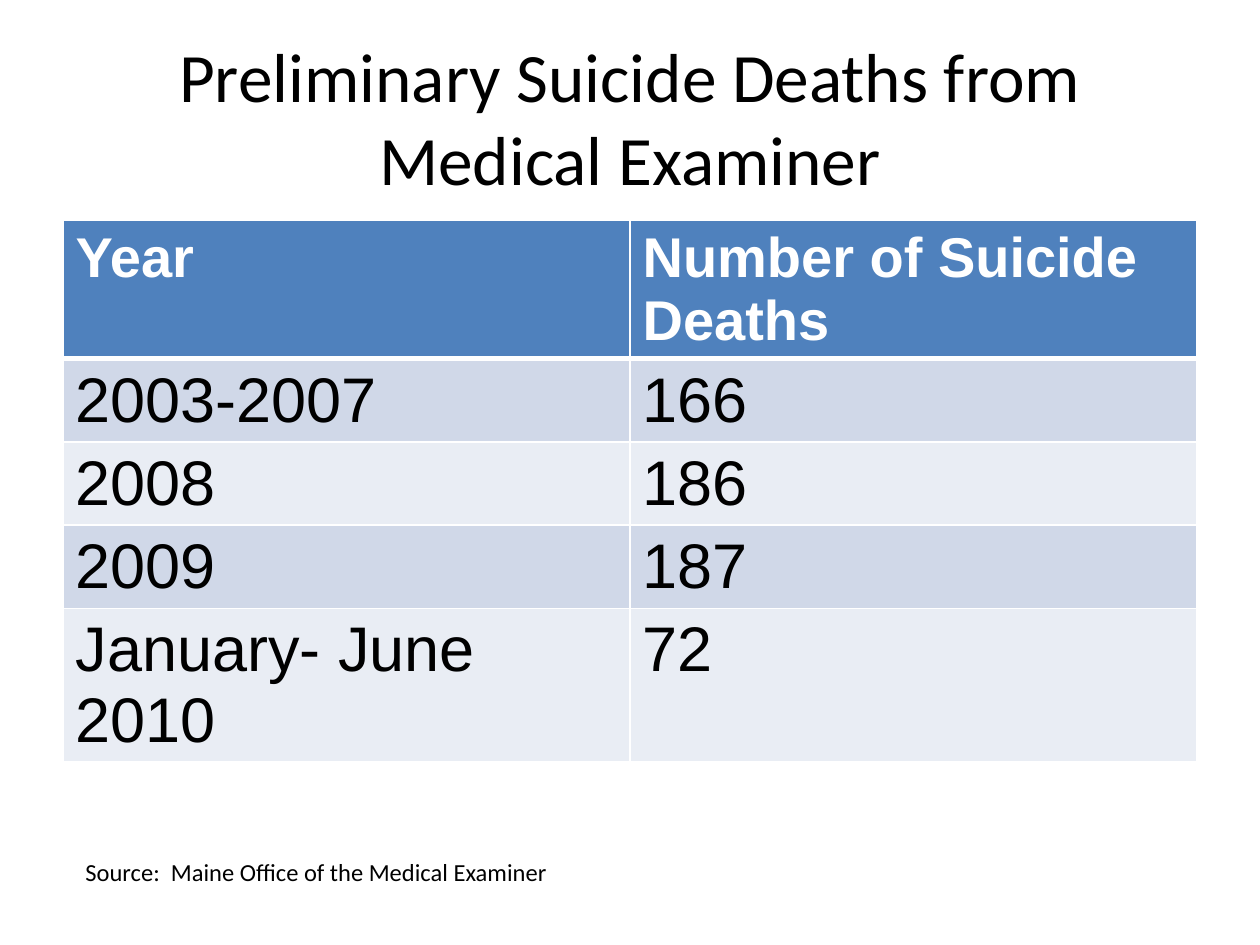
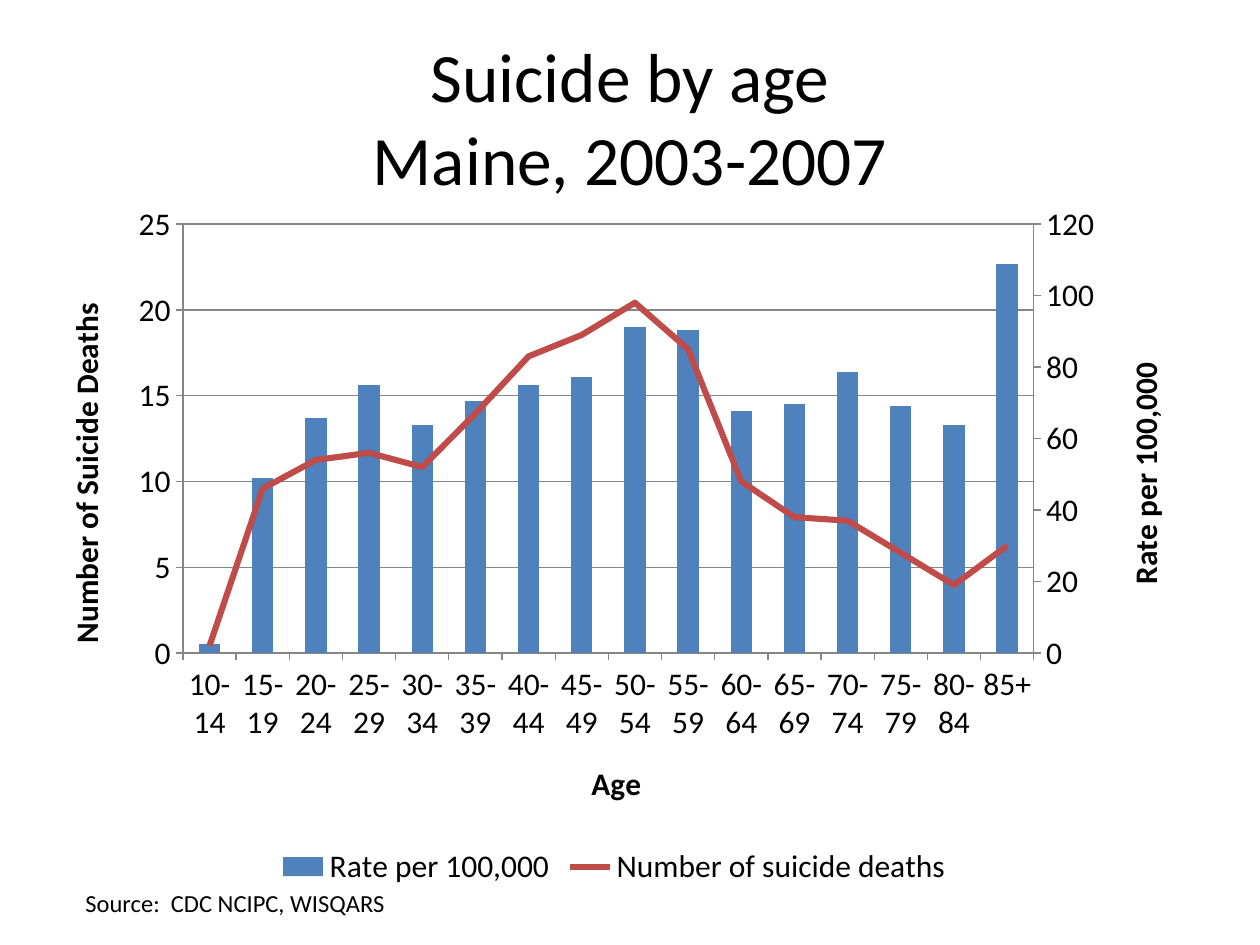
from copy import deepcopy
from dataclasses import dataclass

from lxml import etree
from pptx import Presentation
from pptx import util as u
from pptx.chart import axis as axes
from pptx.chart import data
from pptx.dml.color import RGBColor
from pptx.enum import chart as charts
from pptx.enum import text
from pptx.oxml import parse_xml
from pptx.oxml.ns import nsdecls, qn


@dataclass(frozen=True)
class Theme:
    heading_font: str = "Calibri"
    table_font: str = "Arial"
    ink: str = "000000"
    paper: str = "FFFFFF"
    blue: str = "4F81BD"
    red: str = "BF4C48"
    grey: str = "868686"
    bands: tuple = ("D0D8E8", "E9EDF4")
    title_size: float = 39.6
    header_size: float = 32
    body_size: float = 36
    chart_size: float = 18
    axis_title_size: float = 17.9
    source_size: float = 14


THEME = Theme()
WIDTH, HEIGHT = u.Inches(10), u.Inches(7.5)
COLUMNS, ROWS = 40, 30
TITLE_BOX = (2, 1.2, 36, 5)

DEATHS_BY_YEAR = [
    ("Year", "Number of Suicide Deaths"),
    ("2003-2007", "166"),
    ("2008", "186"),
    ("2009", "187"),
    ("January- June 2010", "72"),
]
ROW_HEIGHTS = (4.32, 2.64, 2.64, 2.64, 4.84)

AGES = [f"{start}-{start + 4}" for start in range(10, 85, 5)] + ["85+"]
RATES = (0.5, 10.2, 13.7, 15.6, 13.3, 14.7, 15.6, 16.1,
         19, 18.8, 14.1, 14.5, 16.4, 14.4, 13.3, 22.7)
DEATHS = (2, 46, 54, 56, 52, 67, 83, 89, 98, 85, 48, 38, 37, 28, 19, 30)


def grid(box):
    """Turn left, top, width, height in grid units into slide lengths."""
    steps = (WIDTH / COLUMNS, HEIGHT / ROWS) * 2
    return [round(count * step) for count, step in zip(box, steps)]


def style_font(font, size, face=THEME.heading_font, colour=THEME.ink, bold=False):
    font.size, font.name, font.bold = u.Pt(size), face, bold
    font.color.rgb = RGBColor.from_string(colour)


def add_span(para, words, size, **style):
    span = para.add_run()
    span.text = words
    style_font(span.font, size, **style)


# Parts shared by both slides
def add_page(deck, title_lines):
    page = deck.slides.add_slide(deck.slide_layouts[5])
    title = page.shapes.title
    title.left, title.top, title.width, title.height = grid(TITLE_BOX)
    frame = title.text_frame
    frame.word_wrap = True
    frame.auto_size = text.MSO_AUTO_SIZE.NONE
    frame.vertical_anchor = text.MSO_ANCHOR.MIDDLE
    para = frame.paragraphs[0]
    para.alignment = text.PP_ALIGN.CENTER
    for number, line in enumerate(title_lines):
        if number:
            para.add_line_break()
        add_span(para, line, THEME.title_size)
    return page


def add_source(page, box, words):
    frame = page.shapes.add_textbox(*grid(box)).text_frame
    frame.word_wrap = True
    frame.auto_size = text.MSO_AUTO_SIZE.SHAPE_TO_FIT_TEXT
    add_span(frame.paragraphs[0], words, THEME.source_size)


# Table
def set_borders(cell, top, bottom):
    properties = cell._tc.get_or_add_tcPr()
    for place, (side, points) in enumerate(
            (("L", 1), ("R", 1), ("T", top), ("B", bottom))):
        properties.insert(place, parse_xml(
            f'<a:ln{side} {nsdecls("a")} w="{u.Pt(points)}"><a:solidFill>'
            f'<a:srgbClr val="{THEME.paper}"/></a:solidFill></a:ln{side}>'))


def add_deaths_table(page, box):
    table = page.shapes.add_table(
        len(DEATHS_BY_YEAR), len(DEATHS_BY_YEAR[0]), *grid(box)).table
    for row_number, entries in enumerate(DEATHS_BY_YEAR):
        header = row_number == 0
        table.rows[row_number].height = round(ROW_HEIGHTS[row_number] * HEIGHT / ROWS)
        fill = THEME.blue if header else THEME.bands[(row_number - 1) % 2]
        for column, words in enumerate(entries):
            cell = table.cell(row_number, column)
            cell.fill.solid()
            cell.fill.fore_color.rgb = RGBColor.from_string(fill)
            set_borders(cell, top=3 if row_number == 1 else 1, bottom=3 if header else 1)
            add_span(cell.text_frame.paragraphs[0], words,
                     THEME.header_size if header else THEME.body_size,
                     face=THEME.table_font, bold=header,
                     colour=THEME.paper if header else THEME.ink)


# Combined chart
def set_axis_line(line):
    line.color.rgb = RGBColor.from_string(THEME.grey)
    line.width = u.Pt(0.75)


def style_axis(axis, title):
    style_font(axis.tick_labels.font, THEME.chart_size)
    set_axis_line(axis.format.line)
    axis.major_tick_mark = charts.XL_TICK_MARK.OUTSIDE
    axis.minor_tick_mark = charts.XL_TICK_MARK.NONE
    para = axis.axis_title.text_frame.paragraphs[0]
    add_span(para, title, THEME.axis_title_size, bold=True)


def scale_axis(axis, top, step):
    axis.minimum_scale, axis.maximum_scale, axis.major_unit = 0, top, step


def set_plot_area(plot_area, left, top, width, height):
    for old in plot_area.findall(qn("c:layout")):
        plot_area.remove(old)
    shares = "".join(f'<c:{name} val="{share}"/>' for name, share in
                     (("x", left), ("y", top), ("w", width), ("h", height)))
    plot_area.insert(0, parse_xml(
        f'<c:layout {nsdecls("c")}><c:manualLayout><c:layoutTarget val="inner"/>'
        f'<c:xMode val="edge"/><c:yMode val="edge"/>{shares}'
        '</c:manualLayout></c:layout>'))


def move_to_line_plot(bar_plot, series, axis_ids):
    """Redraw one column series as a line on the given axes."""
    for flag in series.findall(qn("c:invertIfNegative")):
        series.remove(flag)
    series.find(qn("c:spPr")).addnext(parse_xml(
        f'<c:marker {nsdecls("c")}><c:symbol val="none"/></c:marker>'))
    etree.SubElement(series, qn("c:smooth")).set("val", "0")
    line_plot = parse_xml(
        f'<c:lineChart {nsdecls("c")}><c:grouping val="standard"/>'
        '<c:varyColors val="0"/><c:marker val="1"/>'
        + "".join(f'<c:axId val="{axis_id}"/>' for axis_id in axis_ids)
        + '</c:lineChart>')
    line_plot.insert(2, series)
    bar_plot.addnext(line_plot)


def add_age_chart(page, box):
    numbers = data.CategoryChartData()
    numbers.categories = AGES
    numbers.add_series("Rate per 100,000", RATES)
    numbers.add_series("Number of suicide deaths", DEATHS)
    chart = page.shapes.add_chart(
        charts.XL_CHART_TYPE.COLUMN_CLUSTERED, *grid(box), numbers).chart
    style_font(chart.font, THEME.chart_size)
    chart.has_title = False
    chart.has_legend = True
    chart.legend.position = charts.XL_LEGEND_POSITION.BOTTOM
    chart.legend.include_in_layout = False
    style_font(chart.legend.font, THEME.chart_size)

    # Series
    plot = chart.plots[0]
    plot.gap_width, plot.vary_by_categories = 150, False
    rate, deaths = plot.series
    rate.format.fill.solid()
    rate.format.fill.fore_color.rgb = RGBColor.from_string(THEME.blue)
    deaths.format.line.color.rgb = RGBColor.from_string(THEME.red)
    deaths.format.line.width = u.Pt(3.5)

    # Left and bottom axes
    style_axis(chart.category_axis, "Age")
    style_axis(chart.value_axis, "Number of Suicide Deaths")
    scale_axis(chart.value_axis, 25, 5)
    chart.value_axis.has_major_gridlines = True
    set_axis_line(chart.value_axis.major_gridlines.format.line)

    # Right axis, paired with a hidden category axis
    plot_area = chart.element.find(".//" + qn("c:plotArea"))
    bottom, left = plot_area.find(qn("c:catAx")), plot_area.find(qn("c:valAx"))
    left.find(".//" + qn("a:bodyPr")).set("rot", "-5400000")
    left.find(".//" + qn("a:bodyPr")).set("vert", "horz")
    hidden, right = deepcopy(bottom), deepcopy(left)
    axis_ids = ("50010", "50020")
    for axis, own, other in ((hidden, *axis_ids), (right, *axis_ids[::-1])):
        axis.find(qn("c:axId")).set("val", own)
        axis.find(qn("c:crossAx")).set("val", other)
    right.find(qn("c:axPos")).set("val", "r")
    right.find(qn("c:crosses")).set("val", "max")
    left.addnext(right)
    right.addnext(hidden)
    hidden_axis, right_axis = axes.CategoryAxis(hidden), axes.ValueAxis(right)
    hidden_axis.has_title = hidden_axis.visible = False
    right_axis.has_major_gridlines = False
    right_axis.axis_title.text_frame.paragraphs[0].runs[0].text = "Rate per 100,000"
    scale_axis(right_axis, 120, 20)

    bar_plot = plot_area.find(qn("c:barChart"))
    move_to_line_plot(bar_plot, bar_plot.findall(qn("c:ser"))[1], axis_ids)
    set_plot_area(plot_area, 0.13, 0.05, 0.73, 0.61)


# Slides
def add_table_page(deck):
    page = add_page(deck, ["Preliminary Suicide Deaths from Medical Examiner"])
    add_deaths_table(page, (2, 7, 36, sum(ROW_HEIGHTS)))
    add_source(page, (2.32, 27, 23.32, 1.36),
               "Source:  Maine Office of the Medical Examiner")


def add_chart_page(deck):
    page = add_page(deck, ["Suicide by age", "Maine, 2003-2007"])
    add_age_chart(page, (1, 6, 37, 22.32))
    add_source(page, (2.32, 28, 23.32, 1.36), "Source:  CDC NCIPC, WISQARS")


def main():
    deck = Presentation()
    deck.slide_width, deck.slide_height = WIDTH, HEIGHT
    add_table_page(deck)
    add_chart_page(deck)
    deck.save("out.pptx")


if __name__ == "__main__":
    main()
